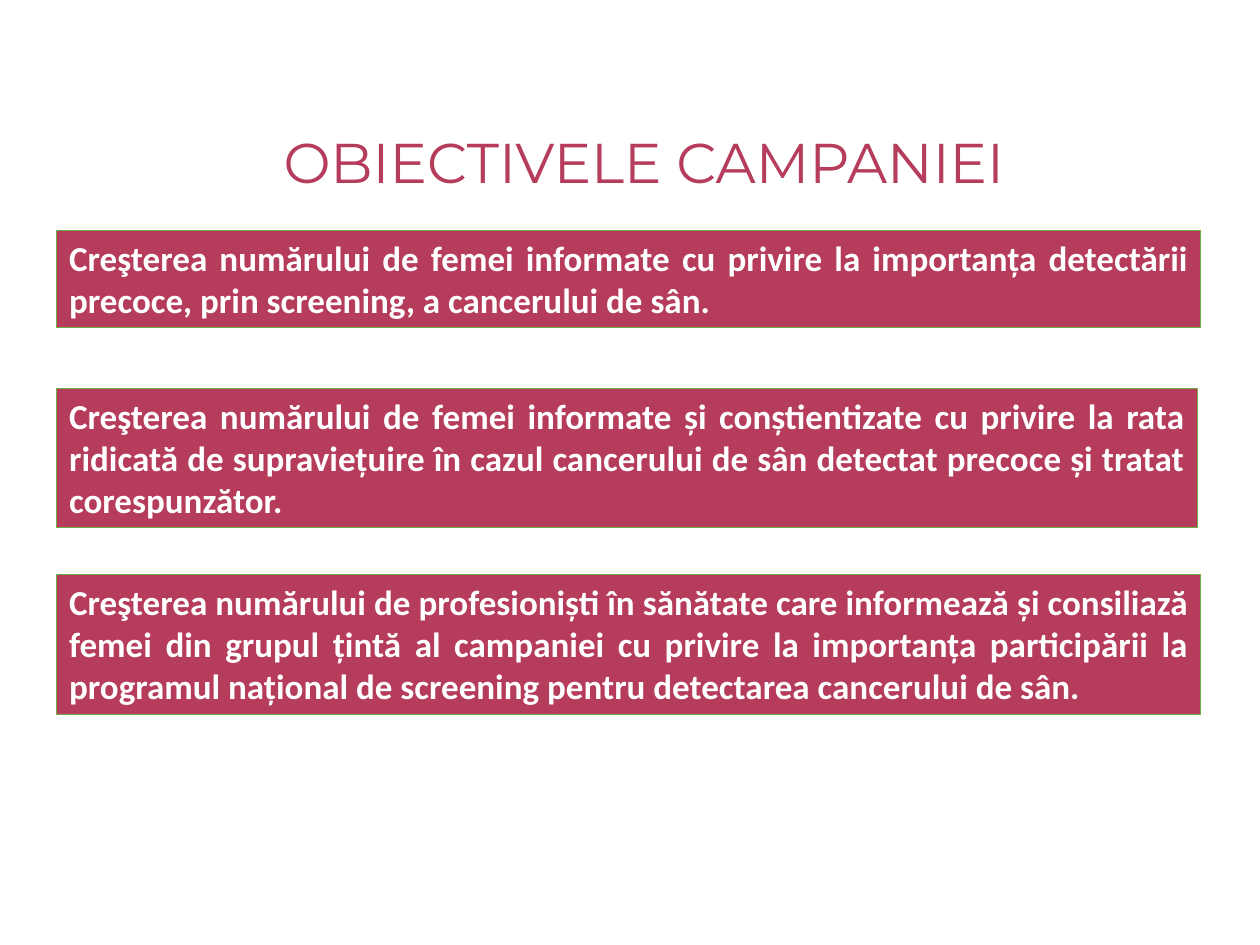
from dataclasses import dataclass

from pptx import Presentation
from pptx.dml.color import RGBColor as RGB
from pptx.enum.shapes import MSO_SHAPE as Shape
from pptx.enum.text import MSO_ANCHOR as Anchor, MSO_AUTO_SIZE as AutoSize, PP_ALIGN as Align
from pptx.util import Inches, Pt


@dataclass(frozen=True)
class Theme:
    rose: RGB = RGB(0xB6, 0x3C, 0x5C)
    green: RGB = RGB(0x70, 0xAD, 0x47)
    white: RGB = RGB(0xFF, 0xFF, 0xFF)
    title_font: str = "Montserrat"
    body_font: str = "Calibri"
    title_size: Pt = Pt(32)
    body_size: Pt = Pt(20)
    border: Pt = Pt(0.5)


THEME = Theme()
TITLE = "OBIECTIVELE CAMPANIEI "
TITLE_BOX = (1.42, 1.02, 7.5, 0.67)

# Each objective: left, top, width, height and wording
OBJECTIVES = [
    ((0.45, 1.83, 9.08, 0.77),
     "Creşterea numărului de femei informate cu privire la importanța "
     "detectării precoce, prin screening, a cancerului de sân."),
    ((0.45, 3.08, 9.05, 1.11),
     "Creşterea numărului de femei informate și conștientizate cu privire la "
     "rata ridicată de supraviețuire în cazul cancerului de sân detectat "
     "precoce și tratat corespunzător."),
    ((0.45, 4.56, 9.08, 1.11),
     "Creşterea numărului de profesioniști în sănătate care informează și "
     "consiliază femei din grupul țintă al campaniei cu privire la importanța "
     "participării la programul național de screening pentru detectarea "
     "cancerului de sân."),
]


def set_all(target, values):
    for name, value in values.items():
        setattr(target, name, value)


def write(frame, text, color, para_format, font_format):
    para = frame.paragraphs[0]
    set_all(para, para_format)
    span = para.add_run()
    span.text = text
    set_all(span.font, font_format)
    span.font.color.rgb = color


def add_title(page, box):
    title = page.shapes.title
    set_all(title, dict(zip(("left", "top", "width", "height"), map(Inches, box))))
    frame = title.text_frame
    set_all(frame, {"word_wrap": True, "auto_size": AutoSize.NONE,
                    "vertical_anchor": Anchor.TOP})
    write(frame, TITLE, THEME.rose,
          {"alignment": Align.CENTER, "line_spacing": 0.9},
          {"name": THEME.title_font, "size": THEME.title_size})


def add_objective(page, box, text):
    panel = page.shapes.add_shape(Shape.RECTANGLE, *map(Inches, box))
    panel.shadow.inherit = False
    panel.fill.solid()
    panel.fill.fore_color.rgb = THEME.rose
    panel.line.color.rgb = THEME.green
    panel.line.width = THEME.border
    frame = panel.text_frame
    set_all(frame, {"word_wrap": True, "auto_size": AutoSize.SHAPE_TO_FIT_TEXT,
                    "vertical_anchor": Anchor.TOP})
    write(frame, text, THEME.white, {"alignment": Align.JUSTIFY},
          {"name": THEME.body_font, "size": THEME.body_size, "bold": True})


def main():
    deck = Presentation()
    set_all(deck, {"slide_width": Inches(10), "slide_height": Inches(7.5)})
    page = deck.slides.add_slide(deck.slide_layouts.get_by_name("Title Only"))
    add_title(page, TITLE_BOX)
    for box, text in OBJECTIVES:
        add_objective(page, box, text)
    deck.save("out.pptx")


if __name__ == "__main__":
    main()
